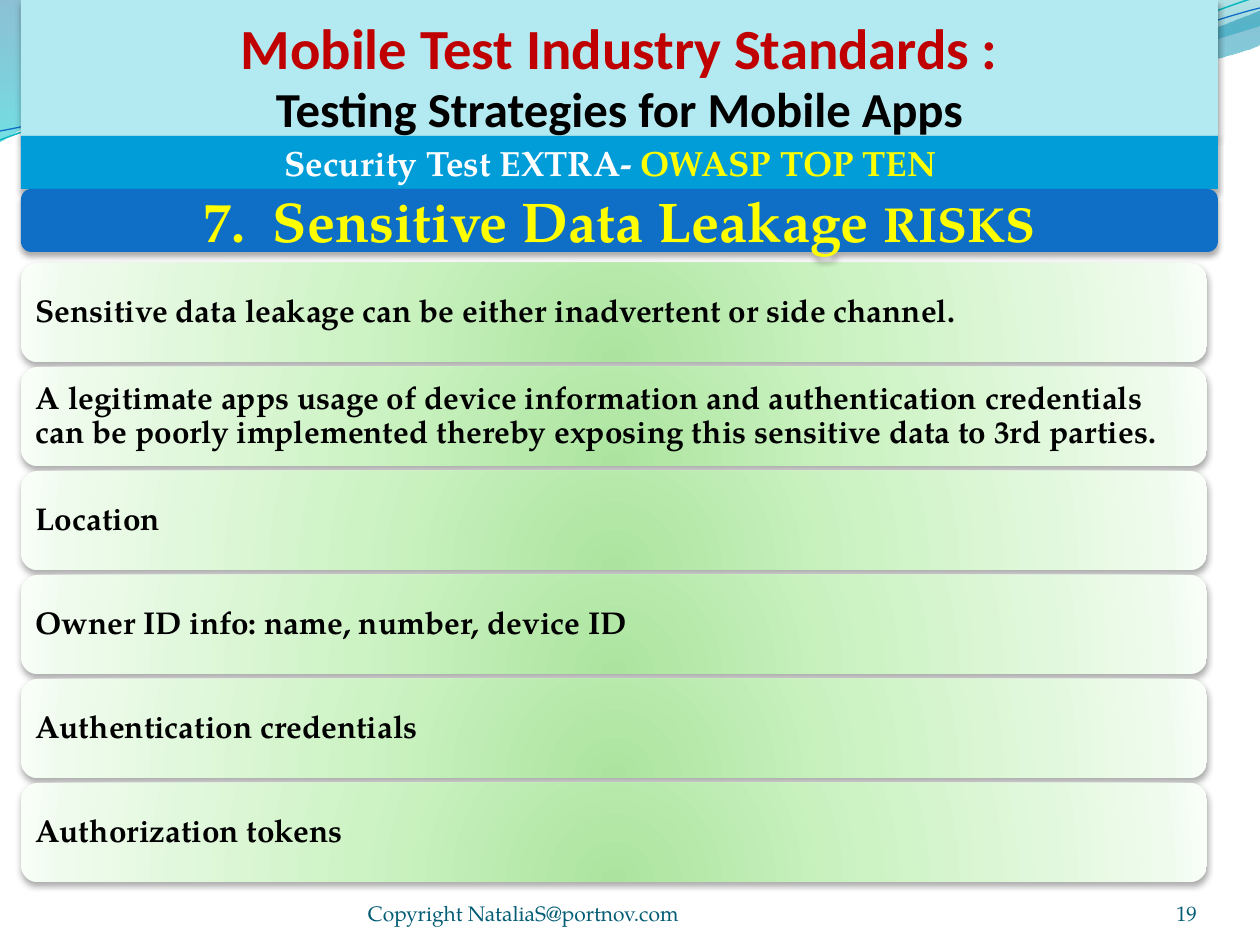
from dataclasses import dataclass

from lxml import etree
from pptx import Presentation
from pptx.dml.color import RGBColor
from pptx.enum.shapes import MSO_SHAPE
from pptx.enum.text import MSO_ANCHOR, MSO_AUTO_SIZE, PP_ALIGN
from pptx.oxml.ns import qn
from pptx.shapes.base import BaseShape
from pptx.slide import Slide
from pptx.text.text import TextFrame
from pptx.util import Emu, Pt

RECTANGLE, ROUNDED = MSO_SHAPE.RECTANGLE, MSO_SHAPE.ROUNDED_RECTANGLE
TOP, MIDDLE, BOTTOM = MSO_ANCHOR.TOP, MSO_ANCHOR.MIDDLE, MSO_ANCHOR.BOTTOM
LEFT, CENTER, RIGHT = PP_ALIGN.LEFT, PP_ALIGN.CENTER, PP_ALIGN.RIGHT
NO_AUTOFIT = MSO_AUTO_SIZE.NONE
EMU_PER_PX = 914400 / 126


@dataclass(frozen=True)
class Theme:
    heading_font: str = "Calibri"
    body_font: str = "TeX Gyre Pagella"
    black: str = "000000"
    white: str = "FFFFFF"
    red: str = "C00000"
    yellow: str = "FFFF00"
    footer: str = "045D75"
    title_fill: str = "B3EAF2"
    band_fill: str = "009DD9"
    risk_fill: str = "0F6FC6"
    teal: str = "0AB8BF"
    title_size: float = 32.4
    subtitle_size: float = 27.9
    band_size: float = 20
    risk_size: float = 32
    risk_small: float = 28
    card_size: float = 18
    footer_size: float = 12


THEME = Theme()


@dataclass(frozen=True)
class Box:
    left: int
    top: int
    width: int
    height: int


@dataclass(frozen=True)
class Span:
    text: str
    color: str | None = None
    size: float | None = None
    tracking: int | None = None
    break_after: bool = False


@dataclass(frozen=True)
class Line:
    spans: tuple[Span, ...]
    size: float
    color: str
    font: str = THEME.body_font
    bold: bool = True
    align: PP_ALIGN = CENTER
    spacing: float = 1.0


@dataclass(frozen=True)
class Stop:
    position: int
    color: str
    alpha: int = 100


@dataclass(frozen=True)
class Wave:
    start: tuple[int, int]
    segments: tuple[tuple[tuple[int, int], ...], ...]
    stops: tuple[Stop, ...] = ()
    color: str = ""
    weight: float = 0


WAVES = (
    Wave((0, 0), (
        ((554, -1),),
        ((600, 21), (837, 79), (955, 79)),
        ((1075, 79), (1207, 33), (1260, 11)),
        ((1261, 45),),
        ((1239, 55), (1096, 96), (940, 95)),
        ((784, 95), (481, 35), (324, 43)),
        ((163, 45), (58, 105), (-1, 142)),
    ), stops=(Stop(0, "0074A1", 45), Stop(100, "00C6CF", 55))),
    Wave((604, -1), (
        ((641, 14), (859, 78), (969, 82)),
        ((1079, 87), (1211, 40), (1260, 26)),
        ((1260, 0),),
    ), stops=(Stop(0, "00A1A9", 30), Stop(80, "008BBF", 45))),
    Wave((0, 140), (
        ((60, 117), (199, 72), (349, 66)),
        ((474, 59), (747, 112), (898, 101)),
        ((1050, 89), (1182, 19), (1257, -3)),
    ), color=THEME.teal, weight=0.85),
    Wave((0, 131), (
        ((59, 121), (207, 77), (357, 71)),
        ((508, 64), (752, 106), (903, 94)),
        ((1053, 84), (1186, 26), (1260, 8)),
    ), color=THEME.risk_fill, weight=0.75),
)
CARD_STOPS = (Stop(0, "ACE49F"), Stop(43, "CDF3C4"), Stop(93, "EFFBED"), Stop(100, "F9FFF8"))
CARDS = (
    "Sensitive data leakage can be either inadvertent or side channel.",
    "A legitimate apps usage of device information and authentication credentials "
    "can be poorly implemented thereby exposing this sensitive data to 3rd parties.",
    "Location",
    "Owner ID info: name, number, device ID",
    "Authentication credentials",
    "Authorization tokens",
)
CARD_TOP, CARD_PITCH = 263, 104


def px(value: float) -> Emu:
    return Emu(round(value * EMU_PER_PX))


def place(shape: BaseShape, box: Box) -> None:
    shape.left, shape.top = px(box.left), px(box.top)
    shape.width, shape.height = px(box.width), px(box.height)


def add_color(parent: etree._Element, color: str, alpha: int) -> None:
    node = etree.SubElement(parent, qn("a:srgbClr"), val=color)
    if alpha < 100:
        etree.SubElement(node, qn("a:alpha"), val=str(alpha * 1000))


def fill_gradient(shape: BaseShape, stops: tuple[Stop, ...], radial: bool = False) -> None:
    shape.fill.gradient()
    gradient = shape.element.spPr.find(qn("a:gradFill"))
    for child in list(gradient):
        gradient.remove(child)
    stop_list = etree.SubElement(gradient, qn("a:gsLst"))
    for stop in stops:
        node = etree.SubElement(stop_list, qn("a:gs"), pos=str(stop.position * 1000))
        add_color(node, stop.color, stop.alpha)
    if radial:
        circle = etree.SubElement(gradient, qn("a:path"), path="circle")
        etree.SubElement(circle, qn("a:fillToRect"), l="50000", t="130000", r="50000", b="-30000")
    else:
        etree.SubElement(gradient, qn("a:lin"), ang="5400000", scaled="1")


def add_shadow(shape: BaseShape) -> None:
    shape.shadow.inherit = False
    effects = shape.element.spPr.find(qn("a:effectLst"))
    shadow = etree.SubElement(effects, qn("a:outerShdw"), blurRad=str(Pt(3.5)),
                              dist=str(Pt(2.2)), dir="5400000", rotWithShape="0")
    add_color(shadow, THEME.black, 32)


def write(frame: TextFrame, line: Line, anchor: MSO_ANCHOR,
          insets: tuple[int, int, int, int]) -> None:
    frame.word_wrap = True
    frame.auto_size = NO_AUTOFIT
    frame.vertical_anchor = anchor
    frame.margin_left, frame.margin_top, frame.margin_right, frame.margin_bottom = map(px, insets)
    para = frame.paragraphs[0]
    para.alignment = line.align
    para.line_spacing = line.spacing
    para.font.name = line.font
    para.font.size = Pt(line.size)
    para.font.bold = line.bold
    para.font.color.rgb = RGBColor.from_string(line.color)
    for span in line.spans:
        run = para.add_run()
        run.text = span.text
        if span.color:
            run.font.color.rgb = RGBColor.from_string(span.color)
        if span.size:
            run.font.size = Pt(span.size)
        if span.tracking:
            run.font._element.set("spc", str(span.tracking))
        if span.break_after:
            para.add_line_break()


def draw_wave(slide: Slide, wave: Wave) -> None:
    builder = slide.shapes.build_freeform(*wave.start, scale=EMU_PER_PX)
    points = [point for segment in wave.segments for point in segment]
    builder.add_line_segments(points, close=bool(wave.stops))
    shape = builder.convert_to_shape()
    steps = iter(list(shape.element.iter(qn("a:lnTo"))))
    for segment in wave.segments:
        nodes = [next(steps) for _ in segment]
        if len(nodes) == 3:
            curve = etree.Element(qn("a:cubicBezTo"))
            nodes[0].addprevious(curve)
            for node in nodes:
                curve.append(node[0])
                node.getparent().remove(node)
    shape.shadow.inherit = False
    if wave.stops:
        fill_gradient(shape, wave.stops)
        shape.line.fill.background()
    else:
        shape.fill.background()
        shape.line.color.rgb = RGBColor.from_string(wave.color)
        shape.line.width = Pt(wave.weight)


def draw_panel(slide: Slide, kind: MSO_SHAPE, box: Box, fill: str | tuple[Stop, ...], line: Line,
               insets: tuple[int, int, int, int]) -> None:
    shape = slide.shapes.add_shape(kind, 0, 0, 0, 0)
    place(shape, box)
    if isinstance(fill, str):
        shape.fill.solid()
        shape.fill.fore_color.rgb = RGBColor.from_string(fill)
    else:
        fill_gradient(shape, fill, radial=True)
    shape.line.fill.background()
    add_shadow(shape)
    write(shape.text_frame, line, MIDDLE, insets)


def draw_title(slide: Slide) -> None:
    title = slide.shapes.title
    title.element.getparent().append(title.element)
    place(title, Box(21, 0, 1197, 136))
    title.fill.solid()
    title.fill.fore_color.rgb = RGBColor.from_string(THEME.title_fill)
    add_shadow(title)
    write(title.text_frame, Line((
        Span("Mobile Test Industry Standards :", THEME.red, THEME.title_size, break_after=True),
        Span("Testing Strategies for Mobile Apps"),
    ), THEME.subtitle_size, THEME.black, THEME.heading_font, spacing=0.96), TOP, (0, 17, 0, 0))


def draw_footer(slide: Slide, box: Box, text: str, align: PP_ALIGN) -> None:
    footer = slide.shapes.add_textbox(0, 0, 0, 0)
    place(footer, box)
    line = Line((Span(text),), THEME.footer_size, THEME.footer, bold=False, align=align)
    write(footer.text_frame, line, BOTTOM, (0, 0, 0, 0))


def main() -> None:
    deck = Presentation()
    deck.slide_width, deck.slide_height = px(1260), px(945)
    slide = deck.slides.add_slide(deck.slide_layouts[5])
    for wave in WAVES:
        draw_wave(slide, wave)
    draw_title(slide)
    draw_panel(slide, RECTANGLE, Box(21, 136, 1197, 53), THEME.band_fill, Line(
        (Span("Security Test EXTRA-"), Span(" OWASP TOP TEN", THEME.yellow)),
        THEME.band_size, THEME.white), (13, 6, 31, 6))
    draw_footer(slide, Box(1092, 876, 105, 50), "19", RIGHT)
    draw_footer(slide, Box(368, 876, 462, 50), "Copyright NataliaS@portnov.com", LEFT)
    for index, text in enumerate(CARDS):
        draw_panel(slide, ROUNDED, Box(21, CARD_TOP + index * CARD_PITCH, 1186, 99), CARD_STOPS,
                   Line((Span(text),), THEME.card_size, THEME.black, align=LEFT, spacing=0.9),
                   (10, 9, 10, 9))
    draw_panel(slide, ROUNDED, Box(21, 189, 1197, 63), THEME.risk_fill, Line(
        (Span("7."), Span(" ", tracking=750), Span("Sensitive Data Leakage "),
         Span("RISKS", size=THEME.risk_small)),
        THEME.risk_size, THEME.yellow), (13, 6, 13, 6))
    deck.save("out.pptx")


if __name__ == "__main__":
    main()
